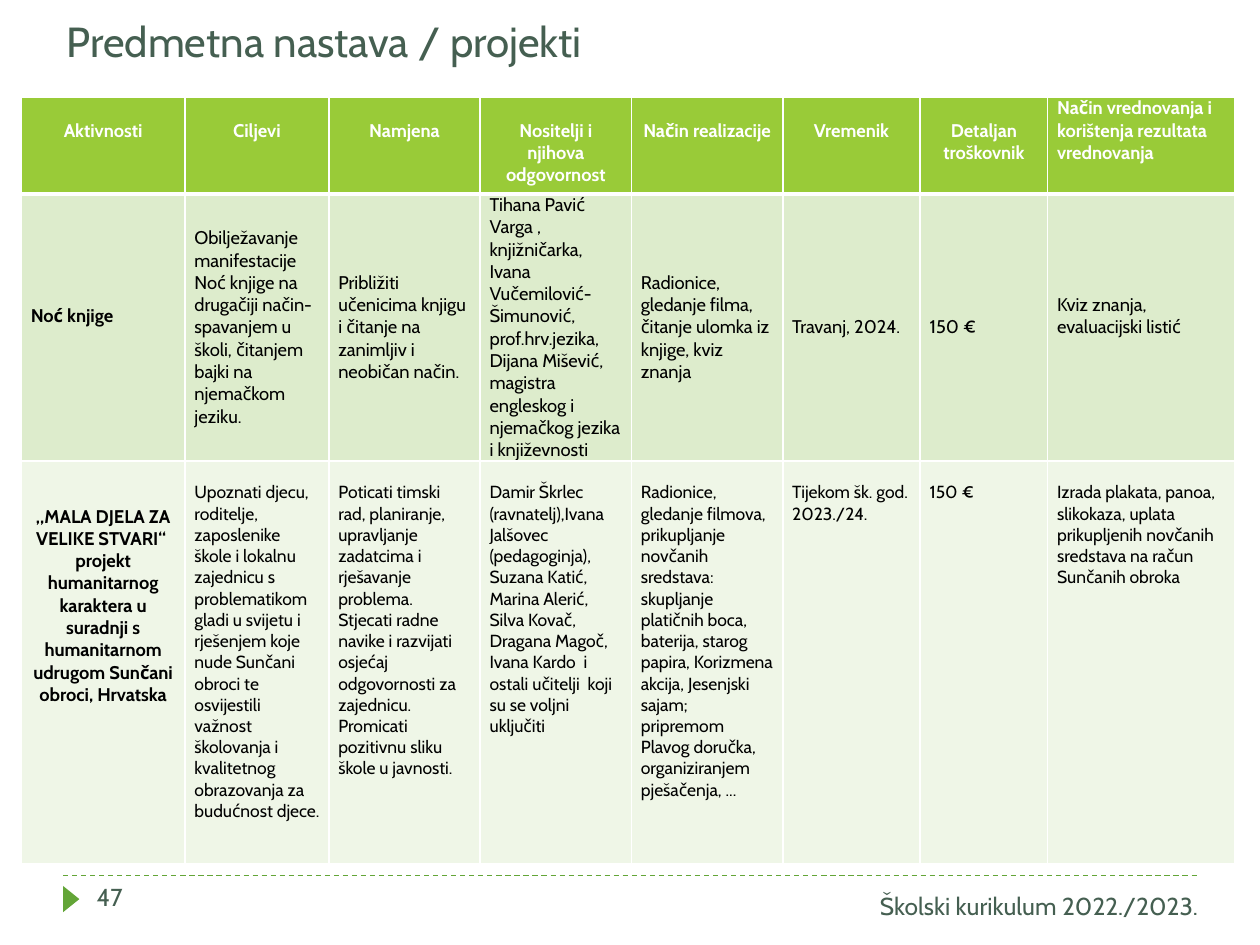
from lxml import etree
from pptx import Presentation
from pptx.dml.color import RGBColor
from pptx.enum.dml import MSO_LINE
from pptx.enum.shapes import MSO_CONNECTOR, MSO_SHAPE
from pptx.enum.text import MSO_ANCHOR, MSO_AUTO_SIZE, PP_ALIGN
from pptx.oxml.ns import qn
from pptx.util import Cm, Pt

LEFT, CENTER, RIGHT = PP_ALIGN.LEFT, PP_ALIGN.CENTER, PP_ALIGN.RIGHT
TOP, MIDDLE, BOTTOM = MSO_ANCHOR.TOP, MSO_ANCHOR.MIDDLE, MSO_ANCHOR.BOTTOM
DASH, STRAIGHT = MSO_LINE.DASH, MSO_CONNECTOR.STRAIGHT
TRIANGLE = MSO_SHAPE.ISOSCELES_TRIANGLE

FONT = "Cabin"
COLORS = {
    "heading": "455F51", "accent": "63A537", "header": "99CB38",
    "first": "DDECCC", "second": "EFF6E7", "white": "FFFFFF", "black": "000000",
}
COLUMN_WIDTHS = [3.3, 2.9, 3.05, 3.05, 3.05, 2.77, 2.57, 3.78]
ROW_HEIGHTS = [1.95, 5.38, 8.13]
LINE_GAP = 0.45  # one line of table text, in cm

HEADERS = [
    "Aktivnosti", "Ciljevi", "Namjena", "Nositelji i njihova odgovornost",
    "Način realizacije", "Vremenik", "Detaljan troškovnik",
    "Način vrednovanja i korištenja rezultata vrednovanja",
]
BOOK_NIGHT = [
    "Noć knjige",
    "Obilježavanje manifestacije Noć knjige na drugačiji način-spavanjem u školi, "
    "čitanjem bajki na njemačkom jeziku.",
    "Približiti učenicima knjigu i čitanje na zanimljiv i neobičan način.",
    "Tihana Pavić Varga , knjižničarka,  Ivana Vučemilović-Šimunović, prof.hrv.jezika,\n"
    "Dijana Mišević,\nmagistra engleskog i njemačkog jezika i književnosti",
    "Radionice, gledanje filma, čitanje ulomka iz knjige, kviz znanja",
    "Travanj, 2024.",
    "150 €",
    "Kviz znanja, evaluacijski listić",
]
CHARITY = [
    ["„MALA DJELA ZA VELIKE STVARI“ ",
     "projekt humanitarnog karaktera u suradnji s humanitarnom udrugom "
     "Sunčani obroci, Hrvatska"],
    "Upoznati djecu, roditelje, zaposlenike škole i lokalnu zajednicu s problematikom "
    "gladi u svijetu i rješenjem koje nude Sunčani obroci te osvijestili važnost "
    "školovanja i kvalitetnog obrazovanja za budućnost djece.",
    ["Poticati timski rad, planiranje, upravljanje zadatcima i rješavanje problema.",
     "Stjecati radne navike i razvijati osjećaj odgovornosti za zajednicu.",
     "Promicati pozitivnu sliku škole u javnosti."],
    "Damir Škrlec  (ravnatelj),Ivana Jalšovec  (pedagoginja), Suzana Katić, Marina Alerić, "
    "Silva Kovač, Dragana Magoč, Ivana Kardo  i ostali učitelji  koji su se voljni uključiti",
    "Radionice, gledanje filmova, prikupljanje novčanih sredstava: skupljanje platičnih "
    "boca, baterija, starog papira, Korizmena akcija, Jesenjski sajam; pripremom Plavog "
    "doručka, organiziranjem pješačenja, ...",
    "Tijekom šk. god. 2023./24.",
    "150 €",
    "Izrada plakata, panoa, slikokaza, uplata prikupljenih novčanih sredstava na račun "
    "Sunčanih obroka",
]


def rgb(name):
    return RGBColor.from_string(COLORS[name])


def write(frame, paragraphs, size, color, align=LEFT, bold=False):
    """Fill a text frame; a newline inside a paragraph becomes a line break."""
    frame.word_wrap = True
    for index, text in enumerate(paragraphs):
        para = frame.paragraphs[0] if index == 0 else frame.add_paragraph()
        para.alignment = align
        for number, piece in enumerate(text.split("\n")):
            if number:
                para.add_line_break()
            span = para.add_run()
            span.text = piece
            span.font.name = FONT
            span.font.size = Pt(size)
            span.font.bold = bold
            span.font.color.rgb = rgb(color)


def add_title(page, left, top, width, height):
    title = page.shapes.title
    title.left, title.top, title.width, title.height = (
        Cm(left), Cm(top), Cm(width), Cm(height))
    frame = title.text_frame
    frame.auto_size = MSO_AUTO_SIZE.NONE
    frame.vertical_anchor = BOTTOM
    write(frame, ["Predmetna nastava / projekti"], 24, "heading", LEFT)


def add_borders(cell, widths):
    properties = cell._tc.get_or_add_tcPr()
    for side, width in zip(("lnL", "lnR", "lnT", "lnB"), widths):
        line = etree.SubElement(properties, qn("a:" + side), w=str(Pt(width)))
        fill = etree.SubElement(line, qn("a:solidFill"))
        etree.SubElement(fill, qn("a:srgbClr"), val=COLORS["white"])


def style_cell(cell, row, column, content):
    """Apply the look of the header, first or second project row."""
    align, anchor, size, above, below = LEFT, TOP, 10.5, 0, 0
    if row == 0 and column < 7:
        align, above = CENTER, LINE_GAP
    elif row == 1:
        anchor = MIDDLE
        below = LINE_GAP if column in (0, 7) else 0
    elif row == 2:
        if column == 0:
            align, above = CENTER, 2 * LINE_GAP
        else:
            size, above = 10, 0.43
    add_borders(cell, (1, 1, 3 if row == 1 else 1, 3 if row == 0 else 1))
    cell.fill.solid()
    cell.fill.fore_color.rgb = rgb(("header", "first", "second")[row])
    cell.margin_left = cell.margin_right = Cm(0.19)
    cell.margin_top, cell.margin_bottom = Cm(above), Cm(below)
    cell.vertical_anchor = anchor
    paragraphs = [content] if isinstance(content, str) else content
    write(cell.text_frame, paragraphs, size, "white" if row == 0 else "black",
          align, bold=row == 0 or column == 0)


def add_projects(page, left, top):
    rows = [HEADERS, BOOK_NIGHT, CHARITY]
    table = page.shapes.add_table(
        len(rows), len(HEADERS), Cm(left), Cm(top),
        Cm(sum(COLUMN_WIDTHS)), Cm(sum(ROW_HEIGHTS))).table
    for column, width in zip(table.columns, COLUMN_WIDTHS):
        column.width = Cm(width)
    for row, height in zip(table.rows, ROW_HEIGHTS):
        row.height = Cm(height)
    for row, contents in enumerate(rows):
        for column, content in enumerate(contents):
            style_cell(table.cell(row, column), row, column, content)


def add_footer(page, left, top, width):
    # Dashed rule
    rule = page.shapes.add_connector(
        STRAIGHT, Cm(left), Cm(top), Cm(left + width), Cm(top))
    rule.line.color.rgb = rgb("accent")
    rule.line.width = Pt(0.75)
    rule.line.dash_style = DASH
    etree.SubElement(rule._element.spPr, qn("a:effectLst"))

    # Page marker
    marker = page.shapes.add_shape(
        TRIANGLE, Cm(left - 0.1), Cm(top + 0.31), Cm(0.53), Cm(0.33))
    marker.rotation = 90
    marker.shadow.inherit = False
    marker.fill.solid()
    marker.fill.fore_color.rgb = rgb("accent")
    marker.line.fill.background()

    # Page number and document name
    for text, shift, drop, box_width, align in (
            ("47", 0.43, 0, 5.5, LEFT),
            ("Školski kurikulum 2022./2023.", 13.41, 0.18, 9.73, RIGHT)):
        box = page.shapes.add_textbox(
            Cm(left + shift), Cm(top + drop), Cm(box_width), Cm(1.02))
        write(box.text_frame, [text], 14, "heading", align)


def main():
    deck = Presentation()
    deck.slide_width, deck.slide_height = Cm(25.4), Cm(19.05)
    page = deck.slides.add_slide(deck.slide_layouts[5])
    add_footer(page, 1.27, 17.65, 22.86)
    add_title(page, 1.09, 0.33, 21.82, 1.12)
    add_projects(page, 0.43, 1.96)
    deck.save("out.pptx")


if __name__ == "__main__":
    main()
